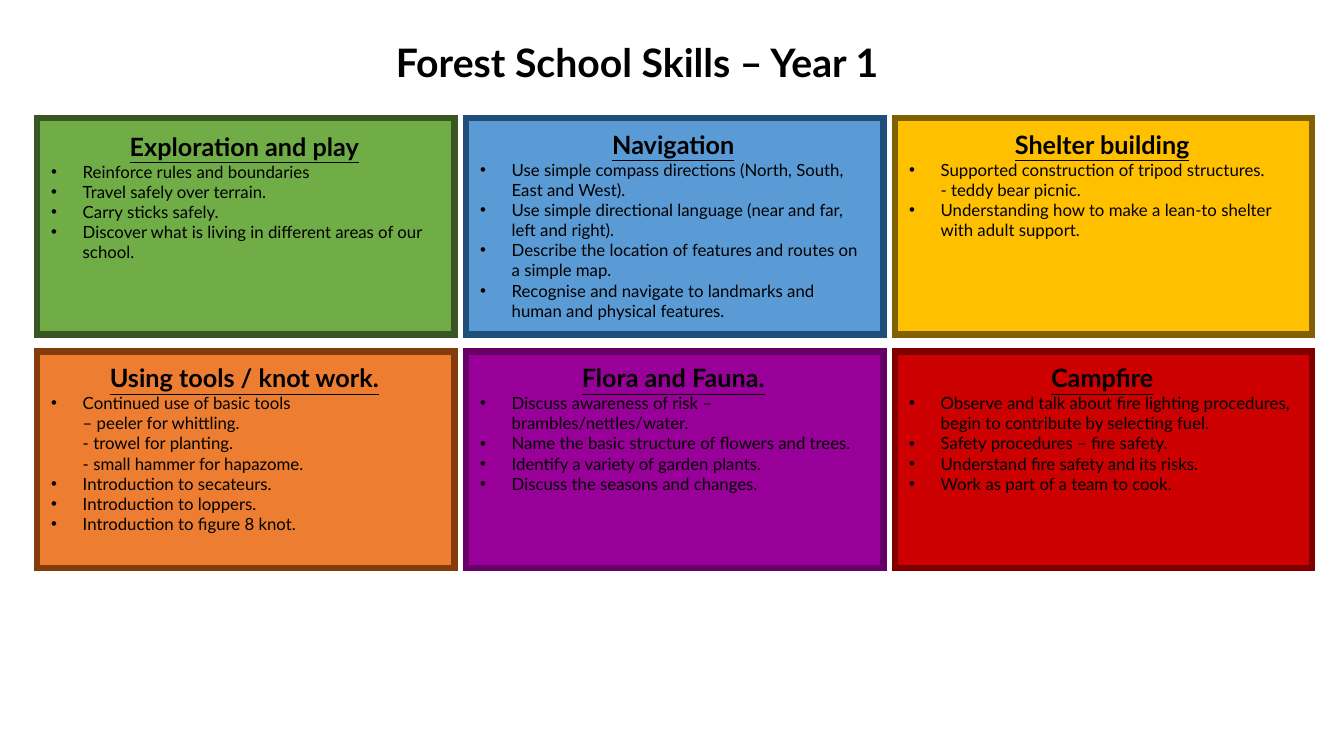
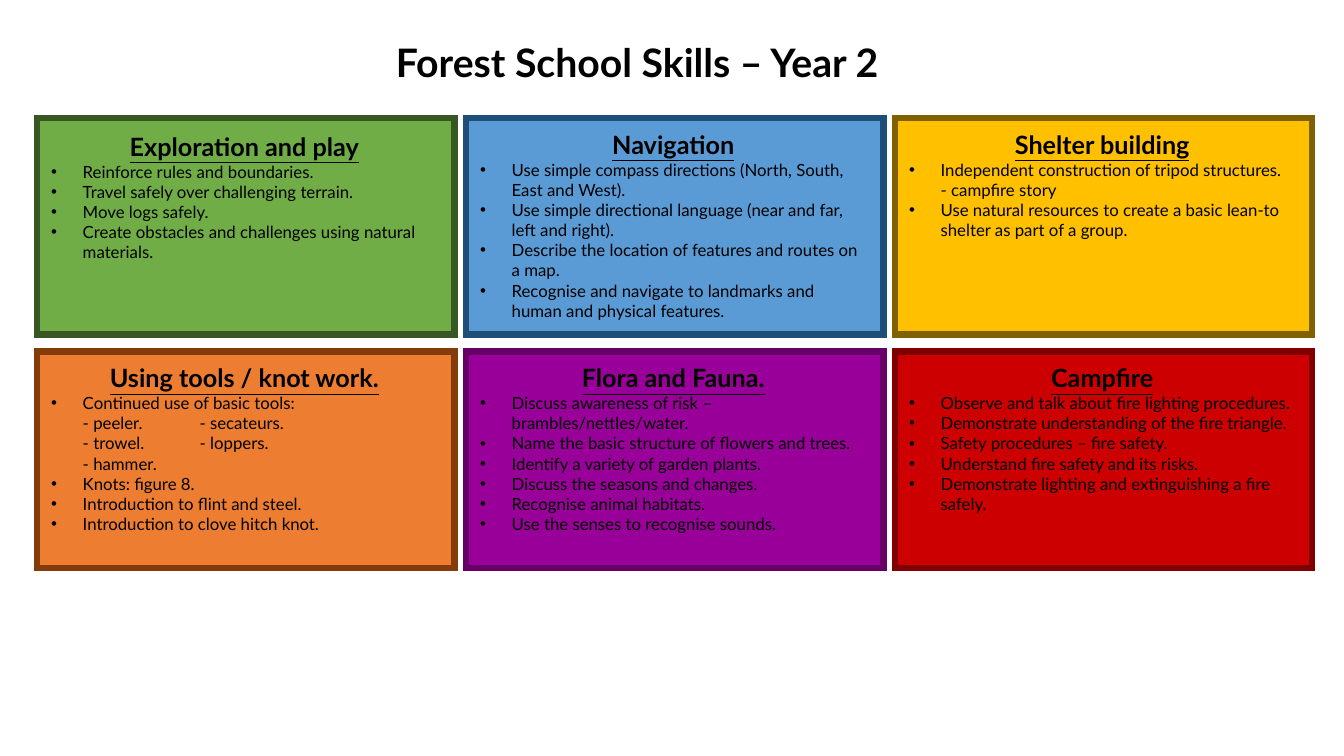
"""Build the Forest School skills slides for Year 1 and Year 2."""
from copy import deepcopy

from lxml import etree
from pptx import Presentation
from pptx.dml.color import RGBColor
from pptx.enum.shapes import MSO_SHAPE
from pptx.enum.text import MSO_AUTO_SIZE, PP_ALIGN
from pptx.oxml.ns import qn
from pptx.util import Pt

RECTANGLE = MSO_SHAPE.RECTANGLE
FIT_SHAPE = MSO_AUTO_SIZE.SHAPE_TO_FIT_TEXT
CENTER = PP_ALIGN.CENTER
LEFT = PP_ALIGN.LEFT

BLACK = RGBColor(0x00, 0x00, 0x00)
GREEN = RGBColor(0x70, 0xAD, 0x47)
DARK_GREEN = RGBColor(0x38, 0x57, 0x23)
BLUE = RGBColor(0x5B, 0x9B, 0xD5)
DARK_BLUE = RGBColor(0x1F, 0x4E, 0x79)
GOLD = RGBColor(0xFF, 0xC0, 0x00)
DARK_GOLD = RGBColor(0x80, 0x60, 0x00)
ORANGE = RGBColor(0xED, 0x7D, 0x31)
BROWN = RGBColor(0x84, 0x3C, 0x0B)
PURPLE = RGBColor(0x99, 0x00, 0x99)
DARK_PURPLE = RGBColor(0x66, 0x00, 0x66)
RED = RGBColor(0xCC, 0x00, 0x00)
DARK_RED = RGBColor(0x80, 0x00, 0x00)

TITLE_FORMAT = {"name": "Lato", "size": Pt(28), "bold": True}
HEADING_FORMAT = {"name": "Lato", "size": Pt(18), "bold": True, "underline": True}
SKILL_FORMAT = {"name": "Lato", "size": Pt(12), "bold": False}

COLUMNS = 3
GRID_LEFT, GRID_TOP = 26.6, 84.4
COLUMN_STEP, ROW_STEP = 306.4, 166.8
CARD_WIDTH, CARD_HEIGHT = 298, 154.6
TEXT_WIDTH, TEXT_HEIGHT, TEXT_INSET = 290, 144, 2.9
BULLET_INDENT = 22.5
TAB_POSITION = 106

TOPICS = [
    ("Exploration and play", GREEN, DARK_GREEN, 5.8),
    ("Navigation", BLUE, DARK_BLUE, 4.3),
    ("Shelter building", GOLD, DARK_GOLD, 4.3),
    ("Using tools / knot work.", ORANGE, BROWN, 4.3),
    ("Flora and Fauna.", PURPLE, DARK_PURPLE, 4.3),
    ("Campfire", RED, DARK_RED, 4.3),
]

DIRECTIONS = [
    "Use simple compass directions (North, South, East and West).",
    "Use simple directional language (near and far, left and right).",
]
LANDMARKS = "Recognise and navigate to landmarks and human and physical features."
NATURE = [
    "Discuss awareness of risk – brambles/nettles/water.",
    "Name the basic structure of flowers and trees.",
    "Identify a variety of garden plants.",
    "Discuss the seasons and changes.",
]
FIRE_SAFETY = [
    "Safety procedures – fire safety.",
    "Understand fire safety and its risks.",
]

YEAR_1 = [
    [
        "Reinforce rules and boundaries",
        "Travel safely over terrain.",
        "Carry sticks safely.",
        "Discover what is living in different areas of our school.",
    ],
    [
        *DIRECTIONS,
        "Describe the location of features and routes on a simple map.",
        LANDMARKS,
    ],
    [
        "Supported construction of tripod structures.\n- teddy bear picnic.",
        "Understanding how to make a lean-to shelter with adult support.",
    ],
    [
        "Continued use of basic tools\n– peeler for whittling.\n"
        "- trowel for planting.\n- small hammer for hapazome.",
        "Introduction to secateurs.",
        "Introduction to loppers.",
        "Introduction to figure 8 knot.",
    ],
    NATURE,
    [
        "Observe and talk about fire lighting procedures, "
        "begin to contribute by selecting fuel.",
        *FIRE_SAFETY,
        "Work as part of a team to cook.",
    ],
]

YEAR_2 = [
    [
        "Reinforce rules and boundaries.",
        "Travel safely over challenging terrain.",
        "Move logs safely.",
        "Create obstacles and challenges using natural materials.",
    ],
    [
        *DIRECTIONS,
        "Describe the location of features and routes on a map.",
        LANDMARKS,
    ],
    [
        "Independent construction of tripod structures.\n- campfire story",
        "Use natural resources to create a basic lean-to shelter as part of a group.",
    ],
    [
        "Continued use of basic tools:\n- peeler.\t- secateurs.\n"
        "- trowel.\t- loppers.\n- hammer.",
        "Knots: figure 8.",
        "Introduction to flint and steel.",
        "Introduction to clove hitch knot.",
    ],
    [
        *NATURE,
        "Recognise animal habitats.",
        "Use the senses to recognise sounds.",
    ],
    [
        "Observe and talk about fire lighting procedures.",
        "Demonstrate understanding of the fire triangle.",
        *FIRE_SAFETY,
        "Demonstrate lighting and extinguishing a fire safely.",
    ],
]


def write_paragraph(paragraph, text, font_format, alignment):
    paragraph.text = text
    paragraph.alignment = alignment
    for run in paragraph.runs:
        for name, value in font_format.items():
            setattr(run.font, name, value)
        run.font.color.rgb = BLACK
    run_properties = paragraph.runs[0]._r.rPr
    for line_break in paragraph._p.findall(qn("a:br")):
        line_break.append(deepcopy(run_properties))


def add_bullet(paragraph):
    properties = paragraph._p.get_or_add_pPr()
    properties.set("marL", str(Pt(BULLET_INDENT)))
    properties.set("indent", str(-Pt(BULLET_INDENT)))
    etree.SubElement(properties, qn("a:buFont"), typeface="Arial")
    etree.SubElement(properties, qn("a:buChar"), char="•")
    if "\t" in paragraph.text:
        tabs = etree.SubElement(properties, qn("a:tabLst"))
        etree.SubElement(tabs, qn("a:tab"), pos=str(Pt(TAB_POSITION)), algn="l")


def add_text_frame(slide, left, top, width, height):
    text_box = slide.shapes.add_textbox(Pt(left), Pt(top), Pt(width), Pt(height))
    text_frame = text_box.text_frame
    text_frame.word_wrap = True
    text_frame.auto_size = FIT_SHAPE
    return text_frame


def add_title(slide, text):
    text_frame = add_text_frame(slide, 100.8, 23.8, 708.4, 41)
    write_paragraph(text_frame.paragraphs[0], text, TITLE_FORMAT, CENTER)


def add_card(slide, left, top, fill_color, line_color):
    card = slide.shapes.add_shape(
        RECTANGLE, Pt(left), Pt(top), Pt(CARD_WIDTH), Pt(CARD_HEIGHT)
    )
    card.shadow.inherit = False
    card.fill.solid()
    card.fill.fore_color.rgb = fill_color
    card.line.color.rgb = line_color
    card.line.width = Pt(4.5)
    etree.SubElement(card.line._get_or_add_ln(), qn("a:miter"), lim="800000")


def add_skills(slide, left, top, heading, skills):
    text_frame = add_text_frame(slide, left, top, TEXT_WIDTH, TEXT_HEIGHT)
    write_paragraph(text_frame.paragraphs[0], heading, HEADING_FORMAT, CENTER)
    for skill in skills:
        paragraph = text_frame.add_paragraph()
        write_paragraph(paragraph, skill, SKILL_FORMAT, LEFT)
        add_bullet(paragraph)


def add_year_slide(presentation, title, skill_lists):
    slide = presentation.slides.add_slide(presentation.slide_layouts[6])
    add_title(slide, title)
    for index, (topic, skills) in enumerate(zip(TOPICS, skill_lists)):
        heading, fill_color, line_color, text_drop = topic
        row, column = divmod(index, COLUMNS)
        left = GRID_LEFT + column * COLUMN_STEP
        top = GRID_TOP + row * ROW_STEP
        add_card(slide, left, top, fill_color, line_color)
        add_skills(slide, left + TEXT_INSET, top + text_drop, heading, skills)


def main():
    presentation = Presentation()
    presentation.slide_width = Pt(960)
    presentation.slide_height = Pt(540)
    add_year_slide(presentation, "Forest School Skills – Year 1", YEAR_1)
    add_year_slide(presentation, "Forest School Skills – Year 2", YEAR_2)
    presentation.save("out.pptx")


if __name__ == "__main__":
    main()
